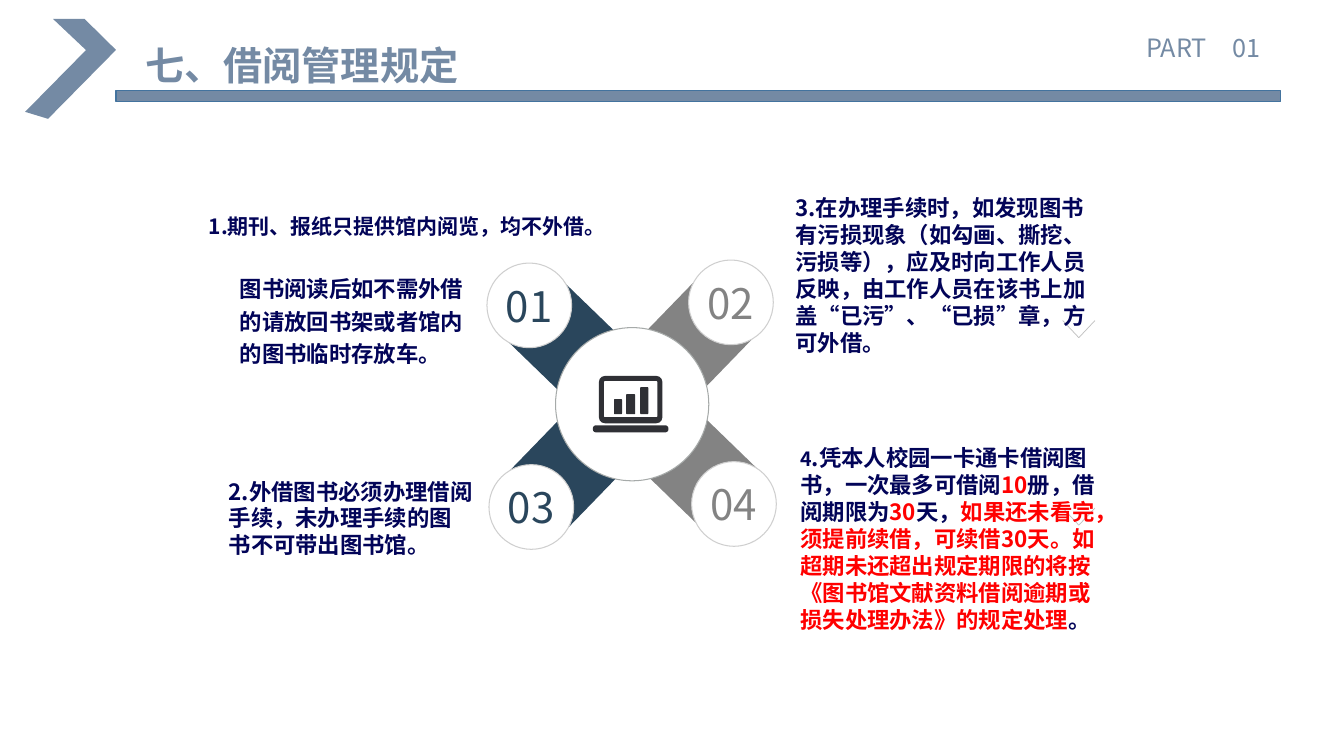
"""Builds the slide on library borrowing rules."""
import math
from dataclasses import dataclass

from lxml import etree
from pptx import Presentation
from pptx.dml.color import RGBColor
from pptx.enum.shapes import MSO_CONNECTOR, MSO_SHAPE
from pptx.enum.text import MSO_ANCHOR, MSO_AUTO_SIZE, PP_ALIGN
from pptx.oxml.ns import qn
from pptx.util import Pt

PX = 9144
FONT = "Noto Sans CJK SC"
STEEL, NAVY, GRAY, INK, RED, WHITE = "748AA4", "2A465C", "838383", "020458", "FF0000", "FFFFFF"
OVAL, BAR, STRAIGHT = MSO_SHAPE.OVAL, MSO_SHAPE.RECTANGLE, MSO_CONNECTOR.STRAIGHT
TOP, MIDDLE = MSO_ANCHOR.TOP, MSO_ANCHOR.MIDDLE
LEFT, CENTER = PP_ALIGN.LEFT, PP_ALIGN.CENTER
GROW, FIXED = MSO_AUTO_SIZE.SHAPE_TO_FIT_TEXT, MSO_AUTO_SIZE.NONE
ARM_SIDE, ARM_BOW, BADGE_SIDE = 81, 14, 84


@dataclass(frozen=True)
class Box:
    """A frame in px."""
    left: int
    top: int
    width: int
    height: int

    def emu(self) -> list[int]:
        """Return the frame in EMU."""
        return [value * PX for value in (self.left, self.top, self.width, self.height)]


@dataclass(frozen=True)
class Span:
    """A stretch of text in one format."""
    text: str
    color: str = INK
    size: int = 16
    bold: bool = True


@dataclass(frozen=True)
class TextStyle:
    """Insets in px and the layout of a text frame."""
    insets: tuple[int, int, int, int] = (10, 5, 10, 5)
    anchor: MSO_ANCHOR = TOP
    align: PP_ALIGN = LEFT
    wrap: bool = True
    auto_size: MSO_AUTO_SIZE = GROW
    spacing: float = 1.0


@dataclass(frozen=True)
class Rule:
    """One borrowing rule."""
    box: Box
    spans: tuple[Span, ...]
    style: TextStyle = TextStyle()


@dataclass(frozen=True)
class Arm:
    """An arm of the hub with its numbered badge."""
    number: str
    color: str
    left: int
    top: int
    rotation: float
    badge_left: int
    badge_top: int


ARMS = (
    Arm("02", GRAY, 651, 294, 224.1, 683, 258),
    Arm("04", GRAY, 654, 426, 314.1, 686, 458),
    Arm("03", NAVY, 520, 428, 44.1, 485, 461),
    Arm("01", NAVY, 518, 295, 134.1, 483, 261),
)
RULES = (
    Rule(Box(238, 248, 227, 121),
         (Span("图书阅读后如不需外借的请放回书架或者馆内的图书临时存放车。"),),
         TextStyle(insets=(0, 20, 0, 0), auto_size=FIXED, spacing=1.2)),
    Rule(Box(202, 188, 281, 72),
         (Span("1.期刊、报纸只提供馆内阅览，均不外借。", size=15),),
         TextStyle(insets=(5, 0, 0, 0), anchor=MIDDLE, wrap=False, auto_size=FIXED)),
    Rule(Box(217, 469, 263, 91),
         (Span("2.外借图书必须办理借阅手续，未办理手续的图书不可带出图书馆。"),)),
    Rule(Box(779, 188, 321, 172),
         (Span("3.在办理手续时，如发现图书有污损现象（如勾画、撕挖、污损等），应及时向工作人员"
               "反映，由工作人员在该书上加盖“已污”、“已损”章，方可外借。"),)),
    Rule(Box(784, 436, 316, 198),
         (Span("4", size=14), Span(".凭本人校园一卡通卡借阅图书，一次最多可借阅"),
          Span("10", RED), Span("册，借阅期限为"), Span("30", RED), Span("天，"),
          Span("如果还未看完，须提前续借，可续借30天。如超期未还超出规定期限的将按"
               "《图书馆文献资料借阅逾期或损失处理办法》的规定处理", RED), Span("。"))),
)
CHEVRON = [(21, 33), (43, 11), (87, 11), (87, 107), (66, 118), (66, 32)]
LAPTOP = (
    (Box(588, 422, 75, 7), 3), (Box(594, 373, 63, 47), 6), (Box(599, 378, 53, 36), 1),
    (Box(609, 396, 8, 15), 1), (Box(621, 391, 9, 20), 1), (Box(635, 384, 8, 27), 1),
)


def rgb(color: str) -> RGBColor:
    """Turn a hex string into a colour."""
    return RGBColor.from_string(color)


def paint(shape, fill: str, line: str = "", line_width: float = 0.75) -> None:
    """Set fill and line and remove the shadow."""
    shape.shadow.inherit = False
    shape.fill.solid()
    shape.fill.fore_color.rgb = rgb(fill)
    if line:
        shape.line.color.rgb = rgb(line)
        shape.line.width = Pt(line_width)
    else:
        shape.line.fill.background()


def write(shape, spans: tuple[Span, ...], style: TextStyle) -> None:
    """Fill a shape with one paragraph of formatted spans."""
    frame = shape.text_frame
    left, top, right, bottom = (inset * PX for inset in style.insets)
    frame_format = {
        "margin_left": left, "margin_top": top, "margin_right": right, "margin_bottom": bottom,
        "word_wrap": style.wrap, "auto_size": style.auto_size, "vertical_anchor": style.anchor,
    }
    for name, value in frame_format.items():
        setattr(frame, name, value)
    paragraph = frame.paragraphs[0]
    paragraph.alignment = style.align
    paragraph.line_spacing = style.spacing
    for span in spans:
        run = paragraph.add_run()
        run.text = span.text
        run.font.color.rgb = rgb(span.color)
        for name, value in {"size": Pt(span.size), "bold": span.bold, "name": FONT}.items():
            setattr(run.font, name, value)
        properties = run._r.get_or_add_rPr()
        properties.set("lang", "zh-CN")
        etree.SubElement(properties, qn("a:ea")).set("typeface", FONT)


def draw_outline(slide, contours: list[list[tuple]], color: str, rotation: float = 0) -> None:
    """Draw closed contours as one filled shape."""
    scaled = [[(x * PX, y * PX) for x, y in contour] for contour in contours]
    builder = slide.shapes.build_freeform(*scaled[0][0])
    for contour in scaled:
        if contour is not scaled[0]:
            builder.move_to(*contour[0])
        builder.add_line_segments(contour[1:], close=True)
    shape = builder.convert_to_shape()
    shape.rotation = rotation
    paint(shape, color)


def rounded_contour(box: Box, radius: int) -> list[tuple]:
    """Return the points of a rectangle with rounded corners."""
    near_x, far_x = box.left + radius, box.left + box.width - radius
    near_y, far_y = box.top + radius, box.top + box.height - radius
    corners = ((near_x, near_y, 180), (far_x, near_y, 270), (far_x, far_y, 0), (near_x, far_y, 90))
    return [(x + radius * math.cos(math.radians(start + step)),
             y + radius * math.sin(math.radians(start + step)))
            for x, y, start in corners for step in range(0, 91, 30)]


def draw_arm(slide, arm: Arm) -> None:
    """Draw a square with one bowed edge and the badge at its end."""
    steps = [step / 12 for step in range(13)]
    edge = [(arm.left + ARM_SIDE * t, arm.top + 4 * ARM_BOW * t * (1 - t)) for t in steps]
    base = arm.top + ARM_SIDE
    draw_outline(slide, [edge + [(arm.left + ARM_SIDE, base), (arm.left, base)]],
                 arm.color, arm.rotation)
    box = Box(arm.badge_left, arm.badge_top, BADGE_SIDE, BADGE_SIDE)
    badge = slide.shapes.add_shape(OVAL, *box.emu())
    paint(badge, WHITE, "CFCFCF")
    write(badge, (Span(arm.number, arm.color, 30, False),),
          TextStyle(insets=(3, 3, 3, 3), anchor=MIDDLE, align=CENTER, auto_size=FIXED))


def draw_check(slide, top: int) -> None:
    """Draw a small downward angle from two thin lines."""
    for start in (1054, 1086):
        ends = (start, top, 1070, top + 17)
        line = slide.shapes.add_connector(STRAIGHT, *(value * PX for value in ends))
        line.line.color.rgb = rgb("BFBFBF")
        line.line.width = Pt(0.5)
        etree.SubElement(line._element.spPr, qn("a:effectLst"))


def main() -> None:
    """Build and save the presentation."""
    presentation = Presentation()
    presentation.slide_width, presentation.slide_height = 1333 * PX, 750 * PX
    slide = presentation.slides.add_slide(presentation.slide_layouts[5])
    shapes = slide.shapes

    draw_outline(slide, [CHEVRON], STEEL, 44.6)
    title = shapes.title
    title.left, title.top, title.width, title.height = Box(137, 37, 462, 55).emu()
    write(title, (Span("七、借阅管理规定", STEEL, 28),), TextStyle(insets=(7, 4, 7, 4)))
    paint(shapes.add_shape(BAR, *Box(115, 90, 1155, 11).emu()), STEEL, "43739E", 1)
    part = shapes.add_textbox(*Box(1127, 27, 202, 40).emu())
    write(part, (Span("PART　01", STEEL, 18, False),), TextStyle())

    for top in (318, 504):
        draw_check(slide, top)
    for arm in ARMS:
        draw_arm(slide, arm)
    paint(shapes.add_shape(OVAL, *Box(551, 325, 152, 152).emu()), WHITE, "A6AAA9")
    draw_outline(slide, [rounded_contour(box, radius) for box, radius in LAPTOP], "2F3035")
    for rule in RULES:
        write(shapes.add_textbox(*rule.box.emu()), rule.spans, rule.style)
    presentation.save("out.pptx")


if __name__ == "__main__":
    main()
